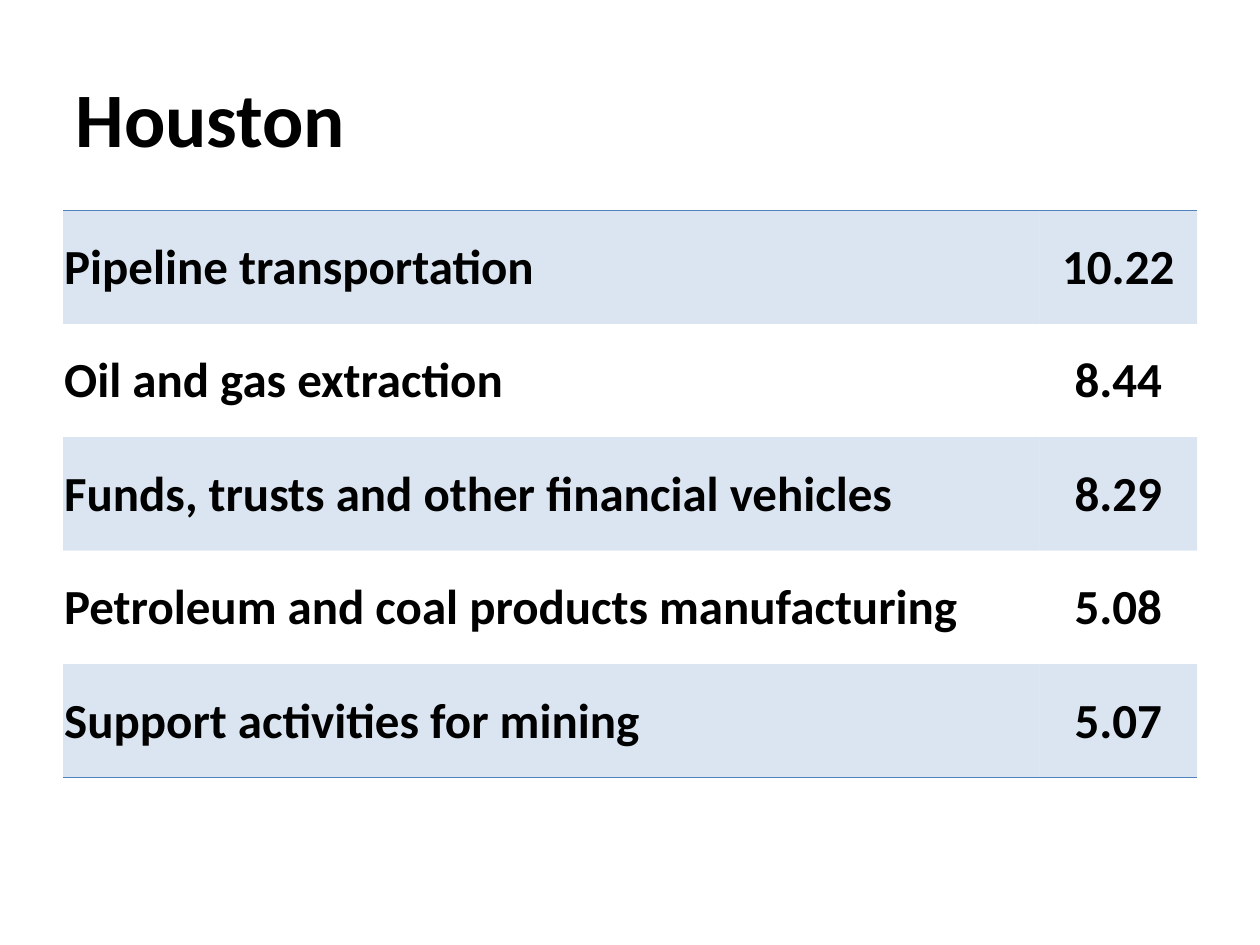
import pptx
import pptx.dml.color
import pptx.enum.text
import pptx.oxml
import pptx.oxml.ns
import pptx.util
from lxml import etree

Inches = pptx.util.Inches
Pt = pptx.util.Pt
RGBColor = pptx.dml.color.RGBColor
ALIGN = pptx.enum.text.PP_ALIGN
MIDDLE = pptx.enum.text.MSO_ANCHOR.MIDDLE
qn = pptx.oxml.ns.qn

BLACK = RGBColor(0x00, 0x00, 0x00)
BLUE = RGBColor(0x4F, 0x81, 0xBD)
BAND_ALPHA = 20
PLAIN_TABLE_STYLE = "{2D5ABB26-0587-4C30-8999-92F81FD0307C}"

INDUSTRIES = [
    ("Pipeline transportation", "10.22"),
    ("Oil and gas extraction", "8.44"),
    ("Funds, trusts and other financial vehicles", "8.29"),
    ("Petroleum and coal products manufacturing", "5.08"),
    ("Support activities for mining", "5.07"),
]


class SlideBuilder:
    def __init__(self, deck, font_name="Calibri"):
        self.page = deck.slides.add_slide(deck.slide_layouts[5])
        self.font_name = font_name

    def set_text(self, text_frame, text, size, alignment):
        text_frame.text = text
        paragraph = text_frame.paragraphs[0]
        paragraph.alignment = alignment
        for span in paragraph.runs:
            span.font.name = self.font_name
            span.font.size = Pt(size)
            span.font.bold = True
            span.font.color.rgb = BLACK

    def title(self, text, left, top, width, height):
        box = self.page.shapes.title
        box.left, box.top = Inches(left), Inches(top)
        box.width, box.height = Inches(width), Inches(height)
        box.text_frame.vertical_anchor = MIDDLE
        self.set_text(box.text_frame, text, 44, ALIGN.LEFT)

    def table(self, rows, left, top, column_widths, row_height):
        frame = self.page.shapes.add_table(
            len(rows), len(column_widths), Inches(left), Inches(top),
            Inches(sum(column_widths)), Inches(row_height * len(rows)))
        table = frame.table
        table.first_row = table.horz_banding = False
        style = table._tbl.tblPr.find(qn("a:tableStyleId"))
        style.text = PLAIN_TABLE_STYLE
        for column, width in zip(table.columns, column_widths):
            column.width = Inches(width)
        for row_index, values in enumerate(rows):
            for column_index, value in enumerate(values):
                cell = table.cell(row_index, column_index)
                alignment = ALIGN.CENTER if column_index else ALIGN.LEFT
                self.cell(cell, value, alignment, banded=row_index % 2 == 0)
                if row_index == 0:
                    self.border(cell, "a:lnT")
                if row_index == len(rows) - 1:
                    self.border(cell, "a:lnB")

    def cell(self, cell, text, alignment, banded):
        cell.margin_left = cell.margin_right = cell.margin_top = Inches(0.01)
        cell.margin_bottom = 0
        cell.vertical_anchor = MIDDLE
        self.set_text(cell.text_frame, text, 28, alignment)
        if banded:
            cell.fill.solid()
            cell.fill.fore_color.rgb = BLUE
            color = cell._tc.tcPr.find(".//" + qn("a:srgbClr"))
            etree.SubElement(color, qn("a:alpha"), val=str(BAND_ALPHA * 1000))
        else:
            cell.fill.background()

    def border(self, cell, side):
        """Draw a one-point line on one side; borders precede the cell's fill."""
        line = pptx.oxml.parse_xml(
            f'<{side} {pptx.oxml.ns.nsdecls("a")} w="{Pt(1)}">'
            f'<a:solidFill><a:srgbClr val="{BLUE}"/></a:solidFill></{side}>')
        cell._tc.tcPr.insert(0, line)


def main():
    deck = pptx.Presentation()
    deck.slide_width, deck.slide_height = Inches(10), Inches(7.5)
    builder = SlideBuilder(deck)
    builder.title("Houston", 0.5, 0.3, 9, 1.25)
    builder.table(INDUSTRIES, 0.5, 1.67, column_widths=(7.75, 1.25), row_height=0.9)
    deck.save("out.pptx")


if __name__ == "__main__":
    main()
